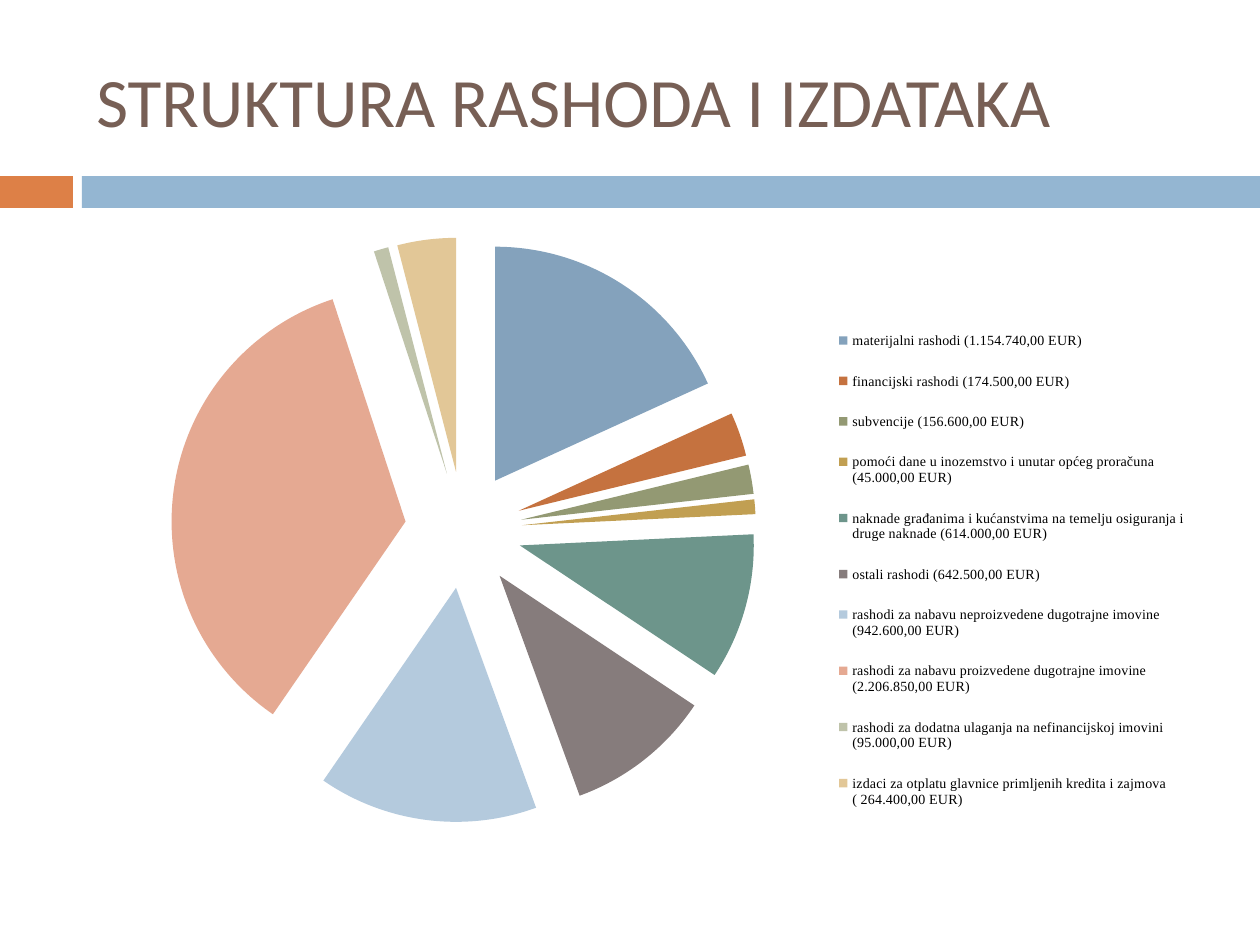
"""Build a slide with an exploded pie of expenditure and outlays."""
import pptx
import pptx.util
import pptx.chart.data
import pptx.dml.color
import pptx.enum.chart
import pptx.enum.shapes
import pptx.enum.text
import pptx.oxml

TITLE = "STRUKTURA RASHODA I IZDATAKA"
ITEMS = [
    ("materijalni rashodi (1.154.740,00 EUR)", 18, "84A2BC"),
    ("financijski rashodi (174.500,00 EUR)", 3, "C5723F"),
    ("subvencije (156.600,00 EUR)", 2, "939973"),
    ("pomoći dane u inozemstvo i unutar općeg proračuna (45.000,00 EUR)", 1, "C19F52"),
    ("naknade građanima i kućanstvima na temelju osiguranja i druge naknade (614.000,00 EUR)", 10, "6D958B"),
    ("ostali rashodi (642.500,00 EUR)", 10, "867C7C"),
    ("rashodi za nabavu neproizvedene dugotrajne imovine (942.600,00 EUR)", 15, "B4CADD"),
    ("rashodi za nabavu proizvedene dugotrajne imovine (2.206.850,00 EUR)", 35, "E5A992"),
    ("rashodi za dodatna ulaganja na nefinancijskoj imovini (95.000,00 EUR)", 1, "BFC3AA"),
    ("izdaci za otplatu glavnice primljenih kredita i zajmova ( 264.400,00 EUR)", 4, "E2C797"),
]
THEME = {
    "title": ("Calibri", 39.6, "775F55"),
    "base": ("Calibri", 18, "000000"),
    "key": ("Times New Roman", 8, "000000"),
    "bars": ("DD8047", "94B6D2"),
}
BARS = [(0, 176, 73, 32), (82, 176, 1178, 32)]
HEAD = (84, 31, 1124, 137)
CHART = (84, 220, 1124, 620)
PIE = (171, 237, 585, 586)
KEY = (831, 308, 362, 524)


def px(n):
    return pptx.util.Emu(n * 7257)


def box(area):
    return [px(n) for n in area]


def rgb(code):
    return pptx.dml.color.RGBColor.from_string(code)


def style(font, role):
    name, size, tint = THEME[role]
    font.name, font.size, font.color.rgb = name, pptx.util.Pt(size), rgb(tint)


def place(area, inner=False):
    left, top, wide, high = CHART
    spots = {
        "x": (area[0] - left) / wide, "y": (area[1] - top) / high,
        "w": area[2] / wide, "h": area[3] / high,
    }
    space = "http://schemas.openxmlformats.org/drawingml/2006/chart"
    parts = '<c:layoutTarget val="inner"/>' if inner else ""
    parts += '<c:xMode val="edge"/><c:yMode val="edge"/>'
    parts += "".join(f'<c:{k} val="{v:.4f}"/>' for k, v in spots.items())
    return pptx.oxml.parse_xml(
        f'<c:layout xmlns:c="{space}"><c:manualLayout>{parts}</c:manualLayout></c:layout>')


def set_layout(host, layout, after=None):
    for old in host.xpath("c:layout"):
        host.remove(old)
    if after is None:
        host.insert(0, layout)
    else:
        after.addnext(layout)


def add_bars(slide):
    for area, tint in zip(BARS, THEME["bars"]):
        bar = slide.shapes.add_shape(pptx.enum.shapes.MSO_SHAPE.RECTANGLE, *box(area))
        bar.shadow.inherit = False
        bar.fill.solid()
        bar.fill.fore_color.rgb = rgb(tint)
        bar.line.fill.background()


def add_title(slide):
    frame = slide.shapes.add_textbox(*box(HEAD)).text_frame
    frame.word_wrap = True
    frame.vertical_anchor = pptx.enum.text.MSO_ANCHOR.MIDDLE
    frame.text = TITLE
    style(frame.paragraphs[0].font, "title")


def add_pie(slide):
    data = pptx.chart.data.CategoryChartData()
    data.categories = [name for name, _, _ in ITEMS]
    data.add_series("Series 1", [value for _, value, _ in ITEMS])
    kind = pptx.enum.chart.XL_CHART_TYPE.PIE_EXPLODED
    chart = slide.shapes.add_chart(kind, *box(CHART), data).chart
    style(chart.font, "base")
    chart.has_title = False
    plot = chart.plots[0]
    plot.vary_by_categories = True
    series = plot.series[0]
    for i, (_, _, tint) in enumerate(ITEMS):
        fill = series.points[i].format.fill
        fill.solid()
        fill.fore_color.rgb = rgb(tint)
    for mark in chart.element.xpath(".//c:ser/c:explosion"):
        mark.set("val", "25")
    chart.has_legend = True
    key = chart.legend
    key.position = pptx.enum.chart.XL_LEGEND_POSITION.RIGHT
    key.include_in_layout = False
    style(key.font, "key")
    root = chart.element
    set_layout(root.xpath(".//c:plotArea")[0], place(PIE, True))
    legend = root.xpath(".//c:legend")[0]
    set_layout(legend, place(KEY), legend.xpath("c:legendPos")[0])


def main():
    deck = pptx.Presentation()
    deck.slide_width, deck.slide_height = px(1260), px(945)
    slide = deck.slides.add_slide(deck.slide_layouts[6])
    add_bars(slide)
    add_title(slide)
    add_pie(slide)
    deck.save("out.pptx")


if __name__ == "__main__":
    main()
